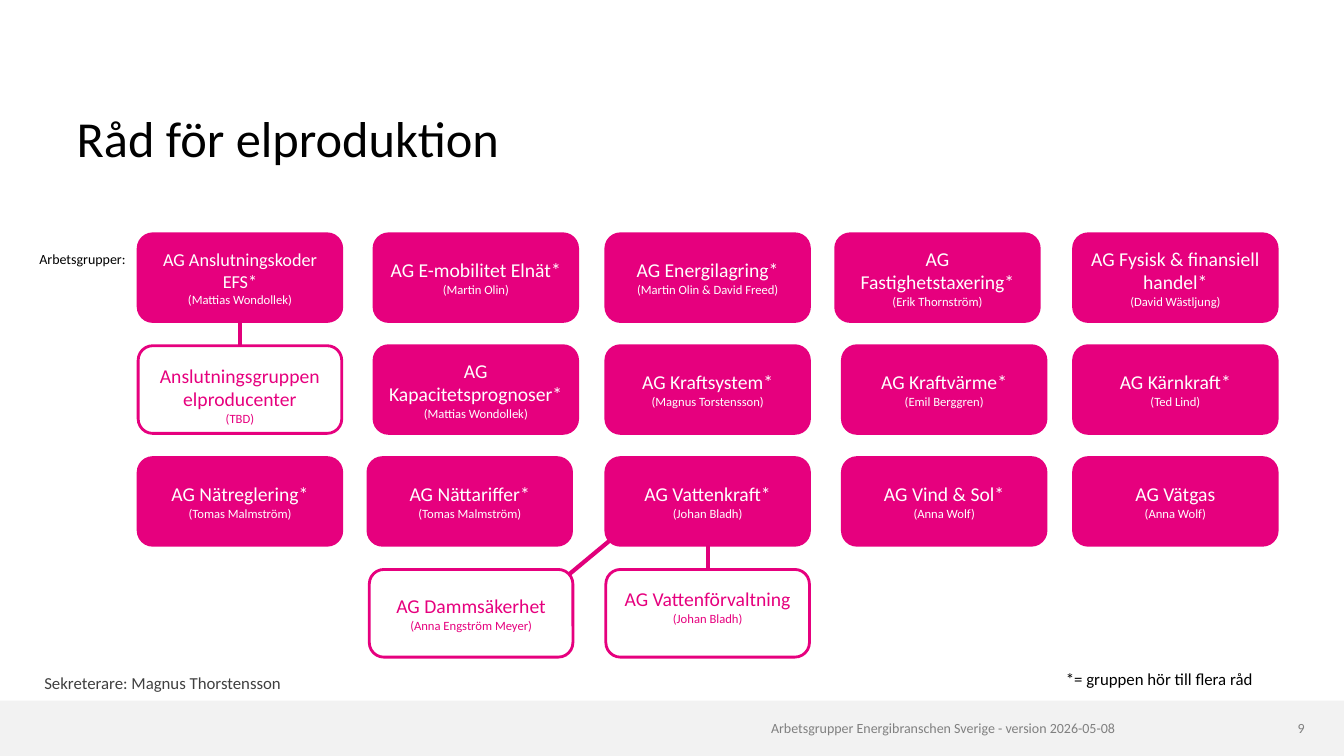
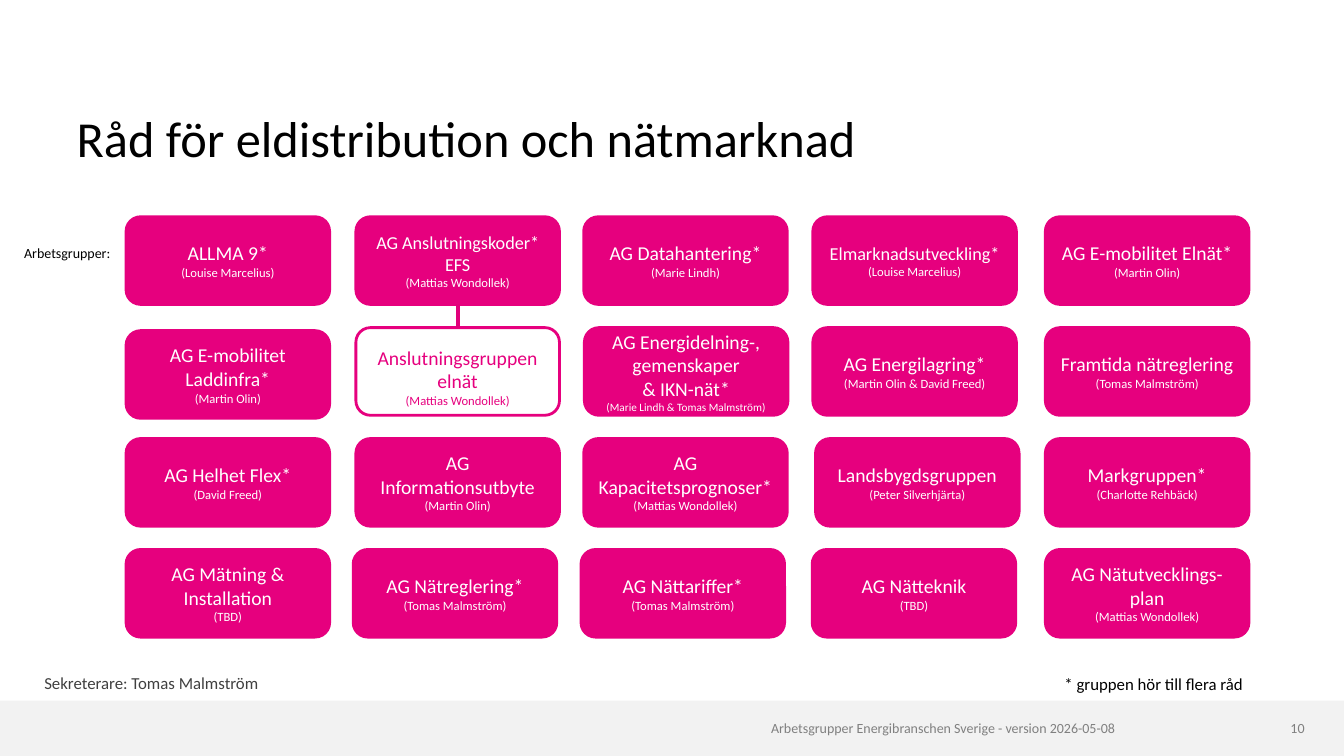
from dataclasses import dataclass

from lxml.etree import SubElement
from pptx import Presentation
from pptx.dml.color import RGBColor
from pptx.enum.shapes import MSO_CONNECTOR as Link, MSO_SHAPE as Preset
from pptx.enum.text import MSO_ANCHOR as Anchor, MSO_AUTO_SIZE as Fit, PP_ALIGN as Align
from pptx.oxml.ns import qn
from pptx.util import Inches, Pt

COLORS = {
    "pink": "E6007E",
    "link": "E1007B",
    "white": "FFFFFF",
    "black": "000000",
    "dark": "404040",
    "gray": "808080",
    "band": "F2F2F2",
}
FOOTER = "Arbetsgrupper Energibranschen Sverige - version 2026-05-08"


@dataclass
class Group:
    name: str
    lead: str
    size: int = 14
    lead_size: int = 9
    right: float = 0
    down: float = 0
    drop: float = 0
    hollow: bool = False


@dataclass
class Grid:
    left: float
    top: float
    column: float
    row: float
    width: float = 15.15
    height: float = 11.6

    def place(self, column, row, group):
        return (self.left + column * self.column + group.right,
                self.top + row * self.row + group.down, self.width, self.height)


class Board:
    """Hold the shared style and the current slide; lengths are percent of the slide."""

    def __init__(self):
        self.deck = Presentation()
        self.deck.slide_width = Inches(13.33)
        self.deck.slide_height = Inches(7.5)
        self.slide = None

    def color(self, name):
        return RGBColor.from_string(COLORS[name])

    def across(self, share):
        return round(self.deck.slide_width * share / 100)

    def along(self, share):
        return round(self.deck.slide_height * share / 100)

    def area(self, place):
        left, top, width, height = place
        return self.across(left), self.along(top), self.across(width), self.along(height)

    def style(self, para, size, color, align=Align.LEFT):
        para.alignment = align
        para.font.name = "Calibri"
        para.font.size = Pt(size)
        para.font.color.rgb = self.color(color)

    def fill_frame(self, frame, words, size, color, align=Align.LEFT, anchor=Anchor.MIDDLE):
        frame.word_wrap = True
        frame.auto_size = Fit.NONE
        frame.vertical_anchor = anchor
        frame.margin_left = frame.margin_right = frame.margin_top = frame.margin_bottom = 0
        para = frame.paragraphs[0]
        para.text = words
        self.style(para, size, color, align)
        return para

    def text(self, place, words, size, color, align=Align.LEFT):
        box = self.slide.shapes.add_textbox(*self.area(place))
        self.fill_frame(box.text_frame, words, size, color, align)

    def shape(self, preset, place, fill, line=None):
        box = self.slide.shapes.add_shape(preset, *self.area(place))
        box.shadow.inherit = False
        box.fill.solid()
        box.fill.fore_color.rgb = self.color(fill)
        if line:
            box.line.color.rgb = self.color(line)
            box.line.width = Pt(2)
        else:
            box.line.fill.background()
        return box

    def page(self, title, number, secretary):
        self.slide = self.deck.slides.add_slide(self.deck.slide_layouts[5])
        heading = self.slide.shapes.title
        heading.left, heading.top, heading.width, heading.height = self.area((5.7, 7.87, 71.2, 14.27))
        para = self.fill_frame(heading.text_frame, title, 36, "black", anchor=Anchor.BOTTOM)
        para.line_spacing = 0.85
        self.shape(Preset.RECTANGLE, (0, 92.67, 100, 7.33), "band")
        self.text((16.5, 95.07, 66.45, 2.53), FOOTER, 10, "gray", Align.RIGHT)
        self.text((94.15, 95.07, 2.92, 2.53), str(number), 10, "gray", Align.RIGHT)
        self.text((3.3, 88.8, 36.5, 3.07), f"Sekreterare: {secretary}", 12, "dark")

    def label(self, left, top):
        self.text((left, top, 8.25, 3.33), "Arbetsgrupper:", 10, "black")

    def note(self, left, top, words):
        self.text((left, top, 18, 3.73), words, 12, "black")

    def group(self, place, group):
        fill, ink = ("white", "pink") if group.hollow else ("pink", "white")
        box = self.shape(Preset.ROUNDED_RECTANGLE, place, fill, "pink")
        frame = box.text_frame
        self.fill_frame(frame, group.name, group.size, ink, Align.CENTER)
        frame.margin_left = frame.margin_right = Inches(0.1)
        frame.margin_top = self.along(max(0, 2 * group.drop))
        frame.margin_bottom = self.along(max(0, -2 * group.drop))
        para = frame.add_paragraph()
        para.text = f"({group.lead})"
        self.style(para, group.lead_size, ink, Align.CENTER)
        return box

    def groups(self, grid, rows):
        return {
            (column, row): self.group(grid.place(column, row, group), group)
            for row, line in enumerate(rows)
            for column, group in enumerate(line)
            if group
        }

    def line(self, start=(0, 0), end=(0, 0)):
        link = self.slide.shapes.add_connector(
            Link.STRAIGHT, self.across(start[0]), self.along(start[1]),
            self.across(end[0]), self.along(end[1]))
        link.line.color.rgb = self.color("link")
        link.line.width = Pt(3)
        SubElement(link._element.spPr, qn("a:effectLst"))
        return link

    def join(self, upper, lower):
        link = self.line()
        link.begin_connect(upper, 2)
        link.end_connect(lower, 0)


PRODUCTION = [
    [
        Group("AG Anslutningskoder EFS*", "Mattias Wondollek", size=13),
        Group("AG E-mobilitet Elnät*", "Martin Olin", right=0.15),
        Group("AG Energilagring*", "Martin Olin & David Freed"),
        Group("AG Fastighetstaxering*", "Erik Thornström", right=-0.3),
        Group("AG Fysisk & finansiell handel*", "David Wästljung"),
    ],
    [
        Group("Anslutningsgruppen elproducenter", "TBD", drop=0.7, hollow=True),
        Group("AG Kapacitetsprognoser*", "Mattias Wondollek", right=0.15),
        Group("AG Kraftsystem*", "Magnus Torstensson"),
        Group("AG Kraftvärme*", "Emil Berggren", right=0.2),
        Group("AG Kärnkraft*", "Ted Lind"),
    ],
    [
        Group("AG Nätreglering*", "Tomas Malmström"),
        Group("AG Nättariffer*", "Tomas Malmström", right=-0.3),
        Group("AG Vattenkraft*", "Johan Bladh"),
        Group("AG Vind & Sol*", "Anna Wolf", right=0.2),
        Group("AG Vätgas", "Anna Wolf"),
    ],
    [
        None,
        Group("AG Dammsäkerhet", "Anna Engström Meyer", right=-0.2, hollow=True),
        Group("AG Vattenförvaltning", "Johan Bladh", drop=-0.9, hollow=True),
    ],
]

DISTRIBUTION = [
    [
        Group("ALLMA 9*", "Louise Marcelius"),
        Group("AG Anslutningskoder* EFS", "Mattias Wondollek", size=13),
        Group("AG Datahantering*", "Marie Lindh", right=-0.15),
        Group("Elmarknadsutveckling*", "Louise Marcelius", size=13, right=-0.2),
        Group("AG E-mobilitet Elnät*", "Martin Olin"),
    ],
    [
        Group("AG E-mobilitet Laddinfra*", "Martin Olin", down=0.4),
        Group("Anslutningsgruppen elnät", "Mattias Wondollek", drop=0.7, hollow=True),
        Group("AG Energidelning-, gemenskaper\v& IKN-nät*", "Marie Lindh & Tomas Malmström",
              lead_size=8, right=-0.1),
        Group("AG Energilagring*", "Martin Olin & David Freed", right=-0.2),
        Group("Framtida nätreglering", "Tomas Malmström"),
    ],
    [
        Group("AG Helhet Flex*", "David Freed"),
        Group("AG Informationsutbyte", "Martin Olin"),
        Group("AG Kapacitetsprognoser*", "Mattias Wondollek", right=-0.15),
        Group("Landsbygdsgruppen", "Peter Silverhjärta"),
        Group("Markgruppen*", "Charlotte Rehbäck"),
    ],
    [
        Group("AG Mätning & Installation", "TBD"),
        Group("AG Nätreglering*", "Tomas Malmström", right=-0.2),
        Group("AG Nättariffer*", "Tomas Malmström", right=-0.35),
        Group("AG Nätteknik", "TBD", right=-0.25),
        Group("AG Nätutvecklings-plan", "Mattias Wondollek"),
    ],
]


def main():
    board = Board()

    board.page("Råd för elproduktion", 9, "Magnus Thorstensson")
    board.label(2.93, 32.53)
    board.note(79.3, 87.87, "*= gruppen hör till flera råd")
    board.line((45.39, 71.47), (42.24, 76.13))
    boxes = board.groups(Grid(10.28, 30.93, 17.4, 14.8), PRODUCTION)
    board.join(boxes[0, 0], boxes[0, 1])
    board.join(boxes[2, 2], boxes[2, 3])

    board.page("Råd för eldistribution och nätmarknad", 10, "Tomas Malmström")
    board.label(1.8, 31.73)
    board.note(79.2, 88.53, "* gruppen hör till flera råd")
    boxes = board.groups(Grid(9.38, 28.67, 17.1, 14.67), DISTRIBUTION)
    board.join(boxes[1, 0], boxes[1, 1])

    board.deck.save("out.pptx")


if __name__ == "__main__":
    main()
